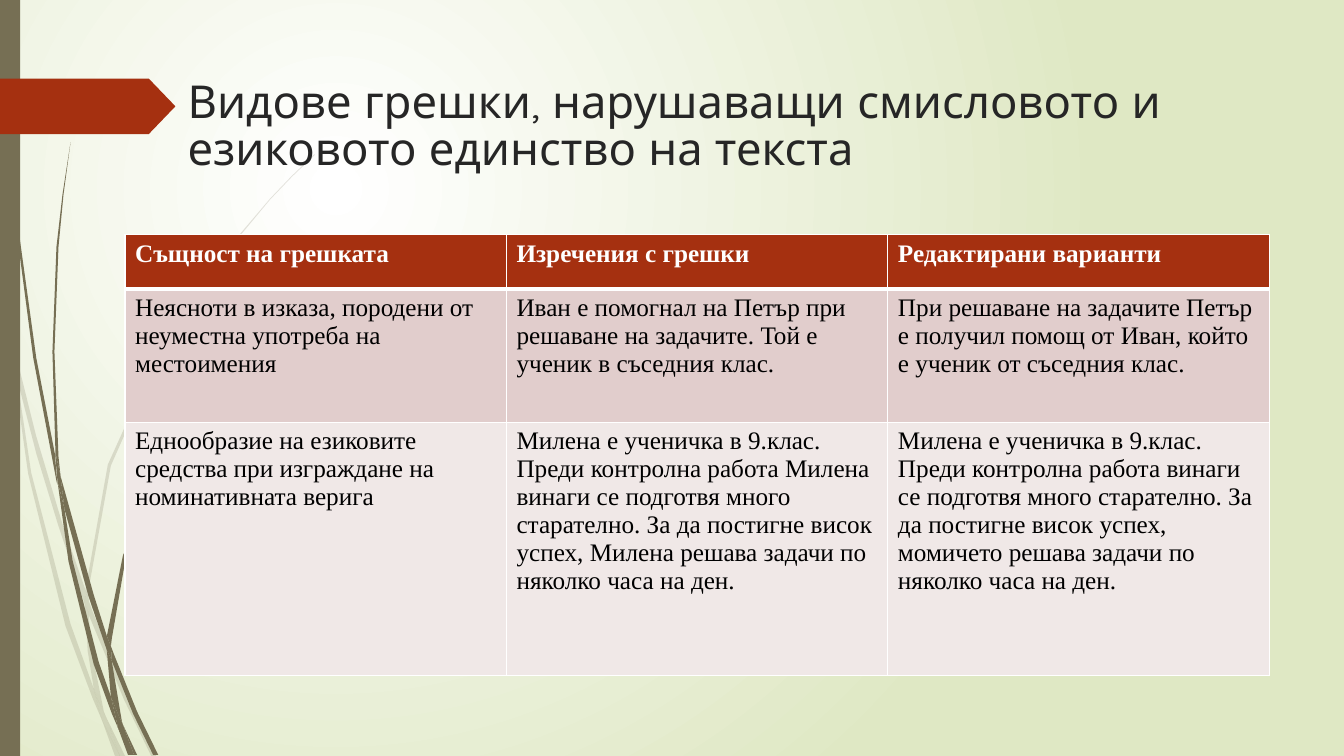
from pptx import Presentation
from pptx.dml.color import RGBColor
from pptx.enum.shapes import MSO_SHAPE
from pptx.enum.text import MSO_ANCHOR, MSO_AUTO_SIZE, PP_ALIGN
from pptx.oxml import parse_xml
from pptx.oxml.ns import nsdecls
from pptx.util import Inches, Pt

WHITE = RGBColor(0xFF, 0xFF, 0xFF)
BLACK = RGBColor(0x00, 0x00, 0x00)
INK = RGBColor(0x26, 0x26, 0x26)
PALE_GREEN = RGBColor(0xDF, 0xE8, 0xC4)
OLIVE = RGBColor(0x76, 0x6F, 0x54)
RUST = RGBColor(0xA5, 0x30, 0x10)
ROSE = RGBColor(0xE1, 0xCD, 0xCC)
PALE_ROSE = RGBColor(0xF0, 0xE8, 0xE7)
ROW_FILLS = [RUST, ROSE, PALE_ROSE]

# Outlines of the grass blades, in hundredths of an inch
PALE_BLADES = [
    [(11, 350), (9, 322), (0, 282), (0, 299), (10, 344)],
    [(58, 522), (84, 599), (85, 586), (62, 520), (36, 433), (14, 345),
     (17, 376), (36, 450)],
    [(92, 607), (88, 596), (88, 610), (123, 694), (150, 750), (155, 750),
     (127, 692)],
    [(119, 750), (124, 750), (105, 711)],
    [(93, 683), (70, 619), (31, 469), (17, 376), (11, 350), (28, 470),
     (65, 621), (92, 693), (101, 714), (99, 707)],
    [(84, 599), (87, 646), (93, 683), (96, 692), (105, 711), (103, 706),
     (91, 646), (88, 610), (88, 608)],
    [(88, 584), (110, 462), (160, 349), (229, 245), (268, 198), (290, 175),
     (312, 154), (312, 153), (289, 175), (268, 197), (228, 244), (158, 348),
     (107, 461), (85, 584), (85, 586), (88, 596)],
    [(101, 714), (114, 750), (119, 750)],
    [(88, 608), (88, 610), (88, 596), (85, 586), (84, 599)],
    [(96, 692), (93, 683), (99, 707), (101, 714), (119, 750), (105, 711)],
]
DARK_BLADES = [
    [(7, 110), (17, 233), (33, 355), (56, 477), (57, 481), (55, 457),
     (55, 453), (36, 355), (19, 232), (8, 109), (5, 48), (4, 0), (3, 0),
     (4, 48)],
    [(88, 592), (106, 645), (106, 633), (106, 631), (93, 590), (60, 472),
     (64, 505)],
    [(113, 649), (110, 641), (111, 656), (132, 708), (152, 749), (157, 749),
     (136, 706)],
    [(110, 691), (98, 657), (72, 556), (64, 505), (57, 477), (68, 557),
     (93, 659), (111, 708), (117, 722), (116, 717)],
    [(60, 472), (58, 453), (54, 349), (58, 245), (63, 193), (70, 141),
     (62, 193), (56, 245), (52, 349), (55, 449)],
    [(133, 749), (136, 749), (122, 719)],
    [(57, 477), (64, 505), (60, 472), (55, 449), (55, 453)],
    [(111, 633), (125, 552), (158, 476), (205, 406), (231, 374), (245, 359),
     (261, 344), (260, 344), (245, 358), (231, 373), (204, 405), (156, 474),
     (122, 551), (106, 631), (110, 641)],
    [(117, 722), (127, 749), (131, 749)],
    [(106, 645), (110, 691), (116, 706), (122, 719), (121, 716), (111, 656),
     (109, 651)],
    [(106, 645), (109, 651), (111, 656), (110, 641), (106, 631), (106, 633)],
    [(116, 706), (110, 691), (116, 717), (117, 722), (130, 749), (133, 749),
     (122, 719)],
]

TITLE = "Видове грешки, нарушаващи смисловото и езиковото единство на текста"
ROWS = [
    ["Същност на грешката", "Изречения с грешки", "Редактирани варианти"],
    ["Неясноти в изказа, породени от неуместна употреба на местоимения",
     "Иван е помогнал на Петър при решаване на задачите. Той е ученик в "
     "съседния клас.",
     "При решаване на задачите Петър е получил помощ от Иван, който е ученик "
     "от съседния клас."],
    ["Еднообразие на езиковите средства при изграждане на номинативната верига",
     "Милена е ученичка в 9.клас. Преди контролна работа Милена винаги се "
     "подготвя много старателно. За да постигне висок успех, Милена решава "
     "задачи по няколко часа на ден.",
     "Милена е ученичка в 9.клас. Преди контролна работа винаги се подготвя "
     "много старателно. За да постигне висок успех, момичето решава задачи по "
     "няколко часа на ден."],
]
ROW_HEIGHTS = [0.54, 1.32, 2.51]


def write_text(tf, text, font="Times New Roman", size=18, color=BLACK, bold=False):
    tf.word_wrap = True
    p = tf.paragraphs[0]
    p.alignment = PP_ALIGN.LEFT
    r = p.add_run()
    r.text = text
    r.font.name, r.font.size, r.font.bold = font, Pt(size), bold
    r.font.color.rgb = color
    return p


def paint(sp, color, alpha=100):
    """Flat fill without line or shadow; alpha is the opacity in percent."""
    sp.shadow.inherit = False
    sp.line.fill.background()
    sp.fill.solid()
    sp.fill.fore_color.rgb = color
    if alpha < 100:
        clr = sp.element.spPr.xpath("./a:solidFill/a:srgbClr")[0]
        clr.append(parse_xml(f'<a:alpha {nsdecls("a")} val="{alpha * 1000}"/>'))


def set_background(slide):
    fill = slide.background.fill
    fill.gradient()
    for stop, color in zip(fill.gradient_stops, (WHITE, PALE_GREEN)):
        stop.color.rgb = color
    lin = slide.element.xpath(".//a:lin")[0]
    lin.getparent().replace(lin, parse_xml(
        f'<a:path {nsdecls("a")} path="circle"><a:fillToRect l="50000" t="50000" '
        'r="100000" b="100000"/></a:path>'))


def add_grass(slide, blades, alpha=100):
    group = slide.shapes.add_group_shape()
    for start, *rest in blades:
        builder = group.shapes.build_freeform(*start, scale=Inches(0.01))
        builder.add_line_segments(rest, close=True)
        paint(builder.convert_to_shape(), OLIVE, alpha)


def add_side_bar(slide, left, top, width, height):
    bar = slide.shapes.add_shape(MSO_SHAPE.RECTANGLE, left, top, width, height)
    paint(bar, OLIVE)


def add_tag(slide, left, top, width, height):
    tag = slide.shapes.add_shape(MSO_SHAPE.PENTAGON, left, top, width, height)
    tag.adjustments[0] = 0.48
    paint(tag, RUST)


def place_title(slide, left, top, width, height):
    """Format the title and bring it in front of the decoration."""
    title = slide.shapes.title
    title.left, title.top, title.width, title.height = left, top, width, height
    tf = title.text_frame
    tf.auto_size = MSO_AUTO_SIZE.NONE
    tf.vertical_anchor = MSO_ANCHOR.TOP
    tf.margin_top = Inches(0.12)
    p = write_text(tf, TITLE, font="Quicksand", size=32.4, color=INK)
    p.line_spacing = 0.87
    title.element.getparent().append(title.element)


def set_borders(cell, **widths):
    """White borders; widths in points by side letter L, R, T, B."""
    tcPr = cell._tc.get_or_add_tcPr()
    for side, width in widths.items():
        tcPr.append(parse_xml(
            f'<a:ln{side} {nsdecls("a")} w="{Pt(width)}"><a:solidFill>'
            f'<a:srgbClr val="{WHITE}"/></a:solidFill></a:ln{side}>'))


def add_error_table(slide, left, top, width, height):
    table = slide.shapes.add_table(len(ROWS), len(ROWS[0]), left, top, width,
                                   height).table
    for i, texts in enumerate(ROWS):
        table.rows[i].height = Inches(ROW_HEIGHTS[i])
        header = i == 0
        for j, text in enumerate(texts):
            cell = table.cell(i, j)
            set_borders(cell, L=1, R=1, T=3 if i == 1 else 1, B=3 if header else 1)
            cell.fill.solid()
            cell.fill.fore_color.rgb = ROW_FILLS[i]
            write_text(cell.text_frame, text, color=WHITE if header else BLACK,
                       bold=header)


def main():
    prs = Presentation()
    prs.slide_width, prs.slide_height = Inches(13.33), Inches(7.5)
    slide = prs.slides.add_slide(prs.slide_layouts[5])
    set_background(slide)
    add_grass(slide, PALE_BLADES, alpha=20)
    add_grass(slide, DARK_BLADES)
    add_side_bar(slide, 0, 0, Inches(0.2), prs.slide_height)
    add_tag(slide, 0, Inches(0.78), Inches(1.74), Inches(0.55))
    place_title(slide, Inches(1.76), Inches(0.68), Inches(10.82), Inches(1.4))
    add_error_table(slide, Inches(1.24), Inches(2.33), Inches(11.35),
                    Inches(sum(ROW_HEIGHTS)))
    prs.save("out.pptx")


if __name__ == "__main__":
    main()
